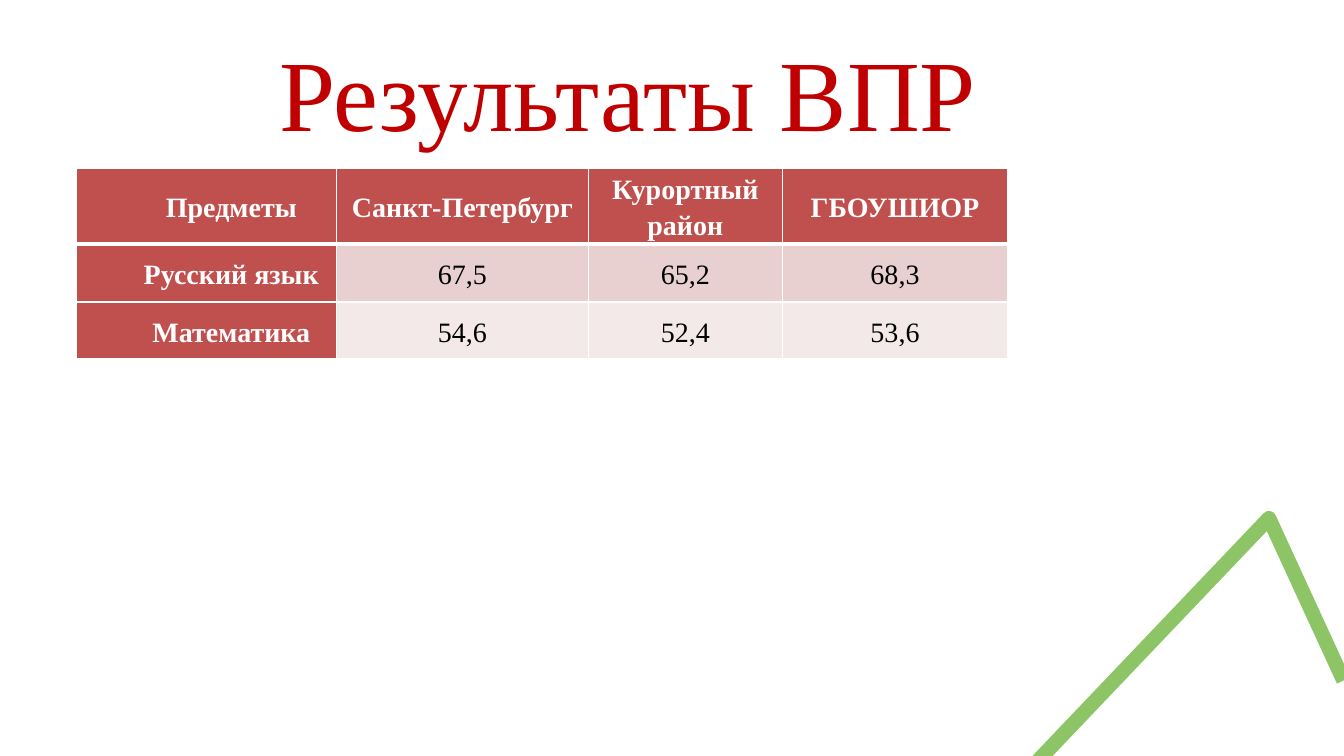
import pptx
import pptx.dml.color
import pptx.enum.text
import pptx.oxml
import pptx.oxml.ns
import pptx.util
from pptx.util import Cm, Pt

COLOURS = {
    "title": "C00000",
    "head": "C0504D",
    "band_dark": "E8D0D0",
    "band_light": "F4E9E9",
    "white": "FFFFFF",
    "black": "000000",
    "peak": "8DC566",
}
FONT = "Times New Roman"
ROWS = [
    ["Предметы", "Санкт-Петербург", "Курортный район", "ГБОУШИОР"],
    ["Русский язык", "67,5", "65,2", "68,3"],
    ["Математика", "54,6", "52,4", "53,6"],
]
COLUMN_WIDTHS = [6.55, 6.35, 4.88, 5.69]
ROW_HEIGHTS = [1.9, 1.47, 1.42]
BODY_FILLS = ["band_dark", "band_light"]


def colour(name):
    return pptx.dml.color.RGBColor.from_string(COLOURS[name])


def add_span(para, text, size, colour_name, bold=False):
    span = para.add_run()
    span.text = text
    span.font.name = FONT
    span.font.size = Pt(size)
    span.font.bold = bold
    span.font.color.rgb = colour(colour_name)


def add_border(cell, side, width):
    namespace = pptx.oxml.ns.nsdecls("a")
    cell._tc.get_or_add_tcPr().append(pptx.oxml.parse_xml(
        f'<a:ln{side} {namespace} w="{Pt(width)}"><a:solidFill>'
        f'<a:srgbClr val="{COLOURS["white"]}"/></a:solidFill></a:ln{side}>'))


def place_title(page, left, top, width, height):
    box = page.shapes.title
    box.left, box.top, box.width, box.height = Cm(left), Cm(top), Cm(width), Cm(height)
    frame = box.text_frame
    frame.word_wrap = True
    frame.auto_size = pptx.enum.text.MSO_AUTO_SIZE.NONE
    frame.vertical_anchor = pptx.enum.text.MSO_ANCHOR.TOP
    para = frame.paragraphs[0]
    para.alignment = pptx.enum.text.PP_ALIGN.LEFT
    add_span(para, "Результаты ВПР", 72, "title")


def fill_cell(cell, text, row, column):
    is_head = row == 0 or column == 0
    cell.margin_left = cell.margin_right = Cm(0.05)
    cell.margin_top = cell.margin_bottom = 0
    cell.vertical_anchor = pptx.enum.text.MSO_ANCHOR.MIDDLE
    widths = {"L": 1, "R": 1, "T": 3 if row == 1 else 1, "B": 3 if row == 0 else 1}
    for side, width in widths.items():
        add_border(cell, side, width)
    cell.fill.solid()
    cell.fill.fore_color.rgb = colour("head" if is_head else BODY_FILLS[row - 1])
    para = cell.text_frame.paragraphs[0]
    para.alignment = pptx.enum.text.PP_ALIGN.CENTER
    para.line_spacing = 1.15
    if column == 0:
        para._p.get_or_add_pPr().set("indent", str(Cm(1.25)))
    add_span(para, text, 20, "white" if is_head else "black", is_head)


def place_results(page, left, top):
    table = page.shapes.add_table(
        len(ROWS), len(COLUMN_WIDTHS), Cm(left), Cm(top),
        Cm(sum(COLUMN_WIDTHS)), Cm(sum(ROW_HEIGHTS))).table
    table.horz_banding = False
    for column, width in zip(table.columns, COLUMN_WIDTHS):
        column.width = Cm(width)
    for row, height in zip(table.rows, ROW_HEIGHTS):
        row.height = Cm(height)
    for row, texts in enumerate(ROWS):
        for column, text in enumerate(texts):
            fill_cell(table.cell(row, column), text, row, column)


def place_peak(page, left, top, width, height):
    summit = (Cm(left + 0.763 * width), Cm(top))
    right_foot = (Cm(left + width), Cm(top + 0.644 * height))
    builder = page.shapes.build_freeform(Cm(left), Cm(top + height))
    builder.add_line_segments([summit, right_foot], close=False)
    peak = builder.convert_to_shape()
    peak.shadow.inherit = False
    peak.fill.background()
    peak.line.color.rgb = colour("peak")
    peak.line.width = Pt(10.44)
    peak.line._get_or_add_ln().append(
        pptx.oxml.parse_xml(f'<a:round {pptx.oxml.ns.nsdecls("a")}/>'))


def main():
    deck = pptx.Presentation()
    deck.slide_width, deck.slide_height = Cm(33.87), Cm(19.05)
    page = deck.slides.add_slide(deck.slide_layouts[5])
    place_peak(page, 25.93, 13.06, 7.93, 6.35)
    place_title(page, 6.78, 0.64, 18.62, 3.33)
    place_results(page, 1.93, 4.24)
    deck.save("out.pptx")


if __name__ == "__main__":
    main()
